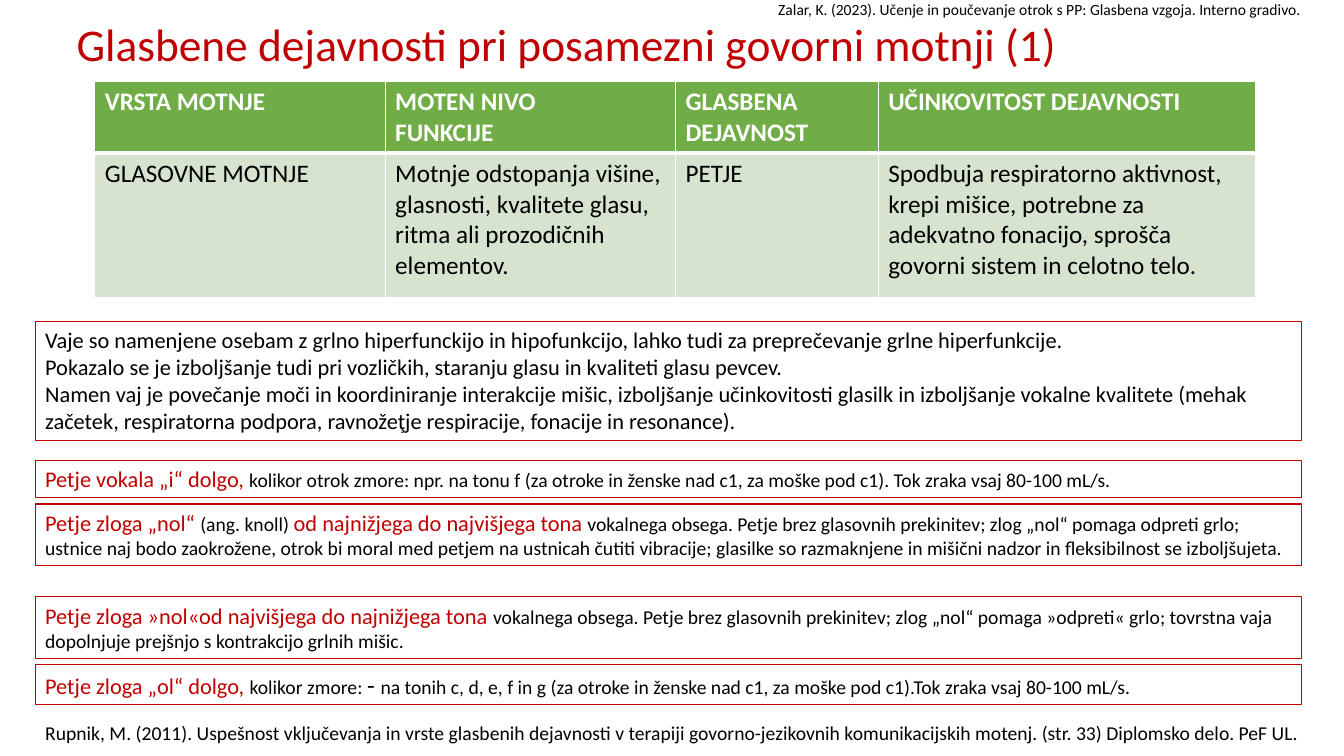
from pptx import Presentation
from pptx.dml.color import RGBColor
from pptx.enum.shapes import MSO_SHAPE as Shape
from pptx.enum.text import MSO_ANCHOR as Anchor, MSO_AUTO_SIZE as AutoSize, PP_ALIGN as Align
from pptx.oxml import parse_xml
from pptx.oxml.ns import nsdecls
from pptx.util import Inches, Pt

# Content
RED, BLACK, WHITE = "C00000", "000000", "FFFFFF"
GREEN, PALE_GREEN = "70AD47", "D5E3CF"

TITLE = "Glasbene dejavnosti pri posamezni govorni motnji (1)"
COURSE_SOURCE = "Zalar, K. (2023). Učenje in poučevanje otrok s PP: Glasbena vzgoja. Interno gradivo."
THESIS_SOURCE = ("Rupnik, M. (2011). Uspešnost vključevanja in vrste glasbenih dejavnosti v terapiji "
                 "govorno-jezikovnih komunikacijskih motenj. (str. 33) Diplomsko delo. PeF UL.")

DISORDERS = [
    ["VRSTA MOTNJE", "MOTEN NIVO\nFUNKCIJE", "GLASBENA DEJAVNOST", "UČINKOVITOST DEJAVNOSTI"],
    ["GLASOVNE MOTNJE",
     "Motnje odstopanja višine, glasnosti, kvalitete glasu, ritma ali prozodičnih elementov.",
     "PETJE",
     "Spodbuja respiratorno aktivnost, krepi mišice, potrebne za adekvatno fonacijo, "
     "sprošča govorni sistem in celotno telo."],
]
COLUMN_WIDTHS = [2.88, 2.88, 2.01, 3.74]
ROW_HEIGHTS = [0.71, 1.43]

# Run styles: size and colour
INTRO, KEY, DETAIL, DASH = (16, BLACK), (16, RED), (14, BLACK), (18, BLACK)

# Boxes: top, height, paragraphs of (text, style) runs
BOXES = [
    (3.19, 1.18, [
        [("Vaje so namenjene osebam z grlno hiperfunckijo in hipofunkcijo, lahko tudi za "
          "preprečevanje grlne hiperfunkcije.", INTRO)],
        [("Pokazalo se je izboljšanje tudi pri vozličkih, staranju glasu in kvaliteti glasu pevcev.", INTRO)],
        [("Namen vaj je povečanje moči in koordiniranje interakcije mišic, izboljšanje učinkovitosti "
          "glasilk in izboljšanje vokalne kvalitete (mehak začetek, respiratorna podpora, "
          "ravnožeţje respiracije, fonacije in resonance).", INTRO)]]),
    (4.57, 0.37, [
        [("Petje vokala „i“ dolgo, ", KEY),
         ("kolikor otrok zmore: npr. na tonu f (za otroke in ženske nad c1, za moške pod c1). "
          "Tok zraka vsaj 80-100 mL/s.", DETAIL)]]),
    (5.0, 0.61, [
        [("Petje zloga „nol“ ", KEY), ("(ang. knoll) ", DETAIL),
         ("od najnižjega do najvišjega tona ", KEY),
         ("vokalnega obsega. Petje brez glasovnih prekinitev; zlog „nol“ pomaga odpreti grlo; "
          "ustnice naj bodo zaokrožene, otrok bi moral med petjem na ustnicah čutiti vibracije; "
          "glasilke so razmaknjene in mišični nadzor in fleksibilnost se izboljšujeta.", DETAIL)]]),
    (5.92, 0.61, [
        [("Petje zloga »nol«od najvišjega do najnižjega tona ", KEY),
         ("vokalnega obsega. Petje brez glasovnih prekinitev; zlog „nol“ pomaga »odpreti« grlo; "
          "tovrstna vaja dopolnjuje prejšnjo s kontrakcijo grlnih mišic.", DETAIL)]]),
    (6.59, 0.4, [
        [("Petje zloga „ol“ dolgo, ", KEY), ("kolikor zmore: ", DETAIL), ("- ", DASH),
         ("na tonih c, d, e, f in g (za otroke in ženske nad c1, za moške pod c1)."
          "Tok zraka vsaj 80-100 mL/s.", DETAIL)]]),
]


def colour(value):
    return RGBColor.from_string(value)


def write(frame, text, size=18, color=BLACK, bold=False, spacing=None, anchor=Anchor.TOP, wrap=True):
    """Fill a frame with a string, or with paragraphs of (text, style) runs."""
    if isinstance(text, str):
        text = [[(line, (size, color))] for line in text.split("\n")]
    frame.word_wrap, frame.vertical_anchor = wrap, anchor
    for number, runs in enumerate(text):
        paragraph = frame.add_paragraph() if number else frame.paragraphs[0]
        paragraph.alignment = Align.LEFT
        if spacing:
            paragraph.line_spacing = spacing
        for words, (run_size, run_color) in runs:
            run = paragraph.add_run()
            run.text = words
            run.font.name, run.font.size, run.font.bold = "Calibri", Pt(run_size), bold
            run.font.color.rgb = colour(run_color)


def add_borders(cell, bottom):
    for side, points in (("L", 1), ("R", 1), ("T", 1), ("B", bottom)):
        cell._tc.get_or_add_tcPr().append(parse_xml(
            f'<a:ln{side} {nsdecls("a")} w="{Pt(points)}"><a:solidFill>'
            f'<a:srgbClr val="{WHITE}"/></a:solidFill></a:ln{side}>'))


def box_at(*lengths):
    return [Inches(length) for length in lengths]


presentation = Presentation()
presentation.slide_width, presentation.slide_height = box_at(13.33, 7.5)
slide = presentation.slides.add_slide(presentation.slide_layouts[5])

# Title
title = slide.shapes.title
title.left, title.top, title.width, title.height = box_at(0.66, 0.24, 11.78, 0.44)
write(title.text_frame, TITLE, size=32.4, color=RED, spacing=0.9, anchor=Anchor.MIDDLE)
title.text_frame.auto_size = AutoSize.NONE

# Table of disorders
disorders = slide.shapes.add_table(
    len(DISORDERS), len(COLUMN_WIDTHS),
    *box_at(0.94, 0.81, sum(COLUMN_WIDTHS), sum(ROW_HEIGHTS))).table
for column, width in zip(disorders.columns, COLUMN_WIDTHS):
    column.width = Inches(width)
for r, (row, height) in enumerate(zip(DISORDERS, ROW_HEIGHTS)):
    disorders.rows[r].height = Inches(height)
    heading = r == 0
    for c, text in enumerate(row):
        cell = disorders.cell(r, c)
        add_borders(cell, bottom=3 if heading else 1)
        cell.fill.solid()
        cell.fill.fore_color.rgb = colour(GREEN if heading else PALE_GREEN)
        write(cell.text_frame, text, color=WHITE if heading else BLACK, bold=heading)

# Exercise boxes
for top, height, paragraphs in BOXES:
    exercise = slide.shapes.add_shape(Shape.RECTANGLE, *box_at(0.35, top, 12.56, height))
    exercise.shadow.inherit = False
    exercise.fill.background()
    exercise.line.color.rgb = colour(RED)
    exercise.line.width = Pt(0.75)
    write(exercise.text_frame, paragraphs)

# Sources
thesis = slide.shapes.add_textbox(*box_at(0.35, 7.1, 12.67, 0.34))
write(thesis.text_frame, THESIS_SOURCE, size=14, wrap=False)
course = slide.shapes.add_textbox(*box_at(7.62, 0, 5.72, 0.24))
write(course.text_frame, COURSE_SOURCE, size=11.1, spacing=0.7, anchor=Anchor.MIDDLE)

presentation.save("out.pptx")
